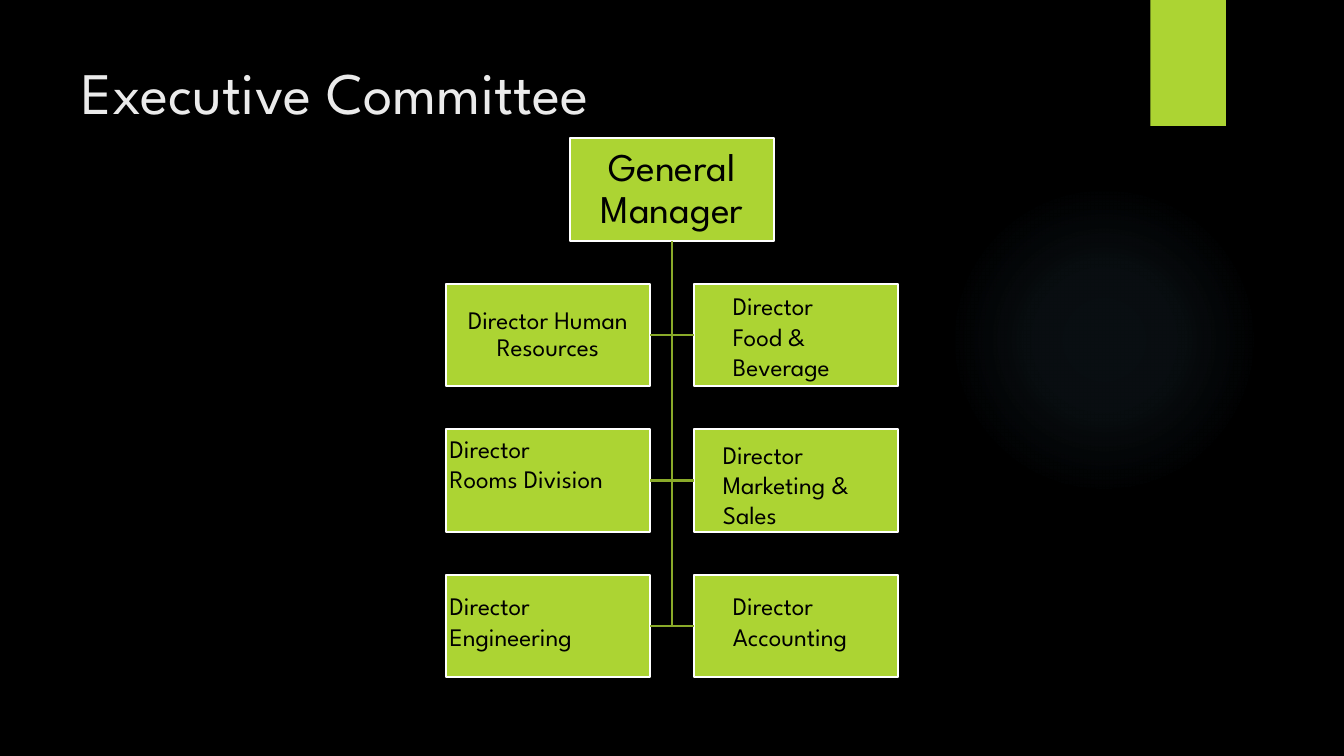
"""Build the Executive Committee organisation chart slide."""
from dataclasses import dataclass

from lxml import etree
from pptx import Presentation
from pptx.dml.color import RGBColor
from pptx.enum.shapes import MSO_CONNECTOR as CONNECTOR, MSO_SHAPE as SHAPE
from pptx.enum.text import MSO_ANCHOR as ANCHOR, PP_ALIGN as ALIGN
from pptx.oxml import parse_xml
from pptx.oxml.ns import nsdecls, qn
from pptx.util import Inches, Pt

TITLE = "Executive Committee"
MANAGER = "General Manager"
DIRECTORS = [
    {"lines": ["Director Human Resources"], "centred": True},
    {"lines": ["Director", "Food &", "Beverage"], "indent": (0.39, 0.07)},
    {"lines": ["Director", "Rooms Division"], "indent": (0.04, 0.04)},
    {"lines": ["Director", "Marketing &", "Sales"], "indent": (0.29, 0.1)},
    {"lines": ["Director", "Engineering"], "indent": (0.04, 0.16)},
    {"lines": ["Director", "Accounting"], "indent": (0.39, 0.16)},
]
GLOW_STOPS = [(0, 7), (36, 6), (69, 0)]


@dataclass(frozen=True)
class Theme:
    font: str = "League Spartan"
    background: str = "000000"
    accent: str = "ACD433"
    branch: str = "8AAA29"
    border: str = "FFFFFF"
    title: str = "EBEBEB"
    text: str = "000000"
    glow: str = "7AC4F0"
    title_size: int = 42
    manager_size: int = 28
    director_size: int = 18
    line_width: float = 1.5


THEME = Theme()
SLIDE_W, SLIDE_H = 13.33, 7.5
BOX_W, BOX_H, COLUMN_GAP = 2.03, 1.02, 0.43
CENTRE_X = SLIDE_W / 2
CHART_TOP, LAST_TOP = 1.37, 5.7
ROW_PITCH = (LAST_TOP - CHART_TOP) / 3


def rgb(value):
    return RGBColor.from_string(value)


def add_block(shapes, kind, at, fill=THEME.accent, border=None):
    sp = shapes.add_shape(kind, *map(Inches, at))
    sp.shadow.inherit = False
    sp.fill.solid()
    sp.fill.fore_color.rgb = rgb(fill)
    if border:
        sp.line.color.rgb = rgb(border)
        sp.line.width = Pt(THEME.line_width)
    else:
        sp.line.fill.background()
    return sp


def set_text(sp, lines, size, color, centred=False, indent=(0.1, 0.05)):
    tf = sp.text_frame
    tf.word_wrap = True
    tf.text = "\n".join(lines)
    tf.vertical_anchor = ANCHOR.MIDDLE if centred else ANCHOR.TOP
    left, top = (0.02, 0.02) if centred else indent
    tf.margin_left, tf.margin_top = Inches(left), Inches(top)
    tf.margin_right = Inches(0.02)
    tf.margin_bottom = Inches(top if centred else 0)
    for p in tf.paragraphs:
        p.alignment = ALIGN.CENTER if centred else ALIGN.LEFT
        p.line_spacing = 0.9 if centred else 1.0
        for r in p.runs:
            r.font.name = THEME.font
            r.font.size = Pt(size)
            r.font.color.rgb = rgb(color)


def add_glow(shapes):
    sp = add_block(shapes, SHAPE.OVAL, (9.41, 1.83, 3.08, 3.08), THEME.glow)
    stops = "".join(
        f'<a:gs pos="{pos * 1000}"><a:srgbClr val="{THEME.glow}">'
        f'<a:alpha val="{alpha * 1000}"/></a:srgbClr></a:gs>'
        for pos, alpha in GLOW_STOPS
    )
    gradient = parse_xml(
        f'<a:gradFill {nsdecls("a")}><a:gsLst>{stops}</a:gsLst><a:path path="circle">'
        '<a:fillToRect l="50000" t="50000" r="50000" b="50000"/></a:path></a:gradFill>'
    )
    sp_pr = sp._element.spPr
    sp_pr.replace(sp_pr.find(qn("a:solidFill")), gradient)


def add_branch(shapes, start, end):
    line = shapes.add_connector(CONNECTOR.STRAIGHT, *map(Inches, start + end))
    line.line.color.rgb = rgb(THEME.branch)
    line.line.width = Pt(THEME.line_width)
    etree.SubElement(line._element.spPr, qn("a:effectLst"))
    return line


def add_org_chart(shapes):
    manager = add_block(shapes, SHAPE.RECTANGLE,
                        (CENTRE_X - BOX_W / 2, CHART_TOP, BOX_W, BOX_H), border=THEME.border)
    set_text(manager, [MANAGER], THEME.manager_size, THEME.text, centred=True)

    trunk = add_branch(shapes, (CENTRE_X, CHART_TOP + BOX_H), (CENTRE_X, LAST_TOP + BOX_H / 2))
    trunk.begin_connect(manager, 2)

    columns = (CENTRE_X - COLUMN_GAP / 2 - BOX_W, CENTRE_X + COLUMN_GAP / 2)
    boxes = []
    for i, director in enumerate(DIRECTORS):
        row, column = divmod(i, 2)
        top = CHART_TOP + (row + 1) * ROW_PITCH
        box = add_block(shapes, SHAPE.RECTANGLE, (columns[column], top, BOX_W, BOX_H),
                        border=THEME.border)
        set_text(box, size=THEME.director_size, color=THEME.text, **director)
        boxes.append(box)

    for left_box, right_box in zip(boxes[::2], boxes[1::2]):
        bar = add_branch(shapes, (columns[0] + BOX_W, CHART_TOP), (columns[1], CHART_TOP))
        bar.begin_connect(left_box, 3)
        bar.end_connect(right_box, 1)


def main():
    prs = Presentation()
    prs.slide_width, prs.slide_height = Inches(SLIDE_W), Inches(SLIDE_H)
    s = prs.slides.add_slide(prs.slide_layouts[6])
    s.background.fill.solid()
    s.background.fill.fore_color.rgb = rgb(THEME.background)

    add_glow(s.shapes)
    add_block(s.shapes, SHAPE.RECTANGLE, (11.41, 0, 0.75, 1.25))
    title = s.shapes.add_textbox(*map(Inches, (0.71, 0.5, 10.29, 1.53)))
    set_text(title, [TITLE], THEME.title_size, THEME.title)
    add_org_chart(s.shapes)
    prs.save("out.pptx")


if __name__ == "__main__":
    main()
